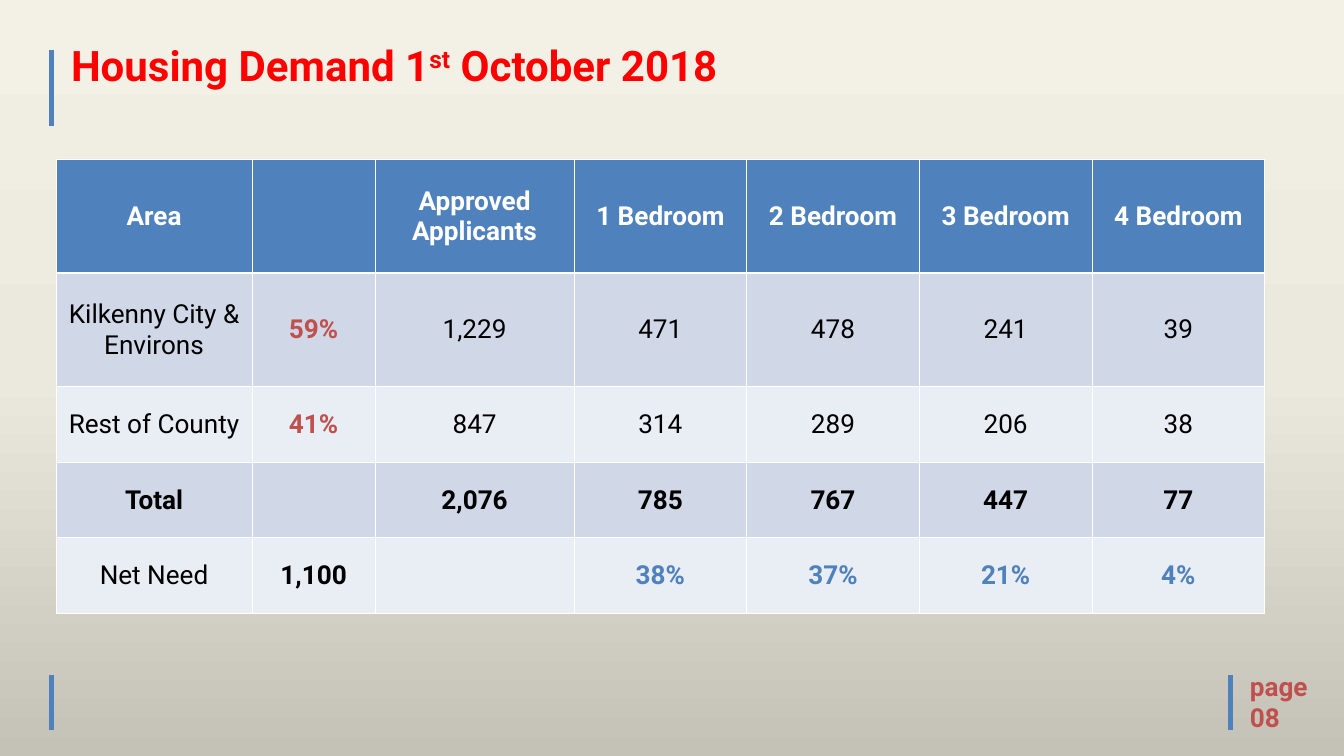
import copy

import pptx
import pptx.dml.color
import pptx.enum.shapes
import pptx.enum.text
import pptx.oxml
import pptx.oxml.ns
import pptx.util

Pt = pptx.util.Pt
RGBColor = pptx.dml.color.RGBColor

BLUE = RGBColor(0x4F, 0x81, 0xBD)
BRICK = RGBColor(0xC0, 0x50, 0x4D)
RED = RGBColor(0xFF, 0x00, 0x00)
BLACK = RGBColor(0x00, 0x00, 0x00)
WHITE = RGBColor(0xFF, 0xFF, 0xFF)
BAND_DARK = RGBColor(0xD0, 0xD8, 0xE8)
BAND_LIGHT = RGBColor(0xE9, 0xED, 0xF4)
BACKDROP = [
    (0, RGBColor(0xF3, 0xF1, 0xE5)),
    (0.5, RGBColor(0xEB, 0xE9, 0xDE)),
    (1, RGBColor(0xC4, 0xC2, 0xB7)),
]

COLUMN_WIDTHS = [210, 132, 213] + [185] * 4
ROW_HEIGHTS = [121.5] * 2 + [81] * 3
DEMAND = [
    ["Area", "", "Approved Applicants",
     "1 Bedroom", "2 Bedroom", "3 Bedroom", "4 Bedroom"],
    ["Kilkenny City & Environs", "59%", "1,229", "471", "478", "241", "39"],
    ["Rest of County", "41%", "847", "314", "289", "206", "38"],
    ["Total", "", "2,076", "785", "767", "447", "77"],
    ["Net Need", "1,100", "", "38%", "37%", "21%", "4%"],
]
HEADER, TOTAL, NET_NEED = 0, 3, 4


def demand_style(row, column):
    """Return the text colour and weight of a table cell."""
    if row == HEADER:
        return WHITE, True
    if row == TOTAL:
        return BLACK, True
    if row == NET_NEED:
        return (BLUE if column > 2 else BLACK), column > 0
    return (BRICK, True) if column == 1 else (BLACK, False)


class SlideBuilder:
    font = "Roboto"
    body_size = 28

    def __init__(self, slide):
        self.slide = slide

    def background(self, stops):
        fill = self.slide.background.fill
        fill.gradient()
        fill.gradient_angle = 270
        stop_list = self.slide.element.xpath(".//a:gsLst")[0]
        while len(stop_list) < len(stops):
            stop_list.append(copy.deepcopy(stop_list[-1]))
        for stop, (position, color) in zip(fill.gradient_stops, stops):
            stop.position = position
            stop.color.rgb = color

    def rule(self, x, top, bottom):
        line = self.slide.shapes.add_connector(
            pptx.enum.shapes.MSO_CONNECTOR.STRAIGHT,
            Pt(x), Pt(top), Pt(x), Pt(bottom))
        line.line.color.rgb = BLUE
        line.line.width = Pt(5)
        line.element.spPr.append(pptx.oxml.parse_xml(
            f"<a:effectLst {pptx.oxml.ns.nsdecls('a')}/>"))

    def add_span(self, para, text, color, size, bold=True):
        span = para.add_run()
        span.text = text
        span.font.name = self.font
        span.font.size = Pt(size)
        span.font.bold = bold
        span.font.color.rgb = color
        return span

    def text(self, left, top, width, height, lines, color, size, spacing=1.0):
        """Each line is a list of (text, superscript) pairs."""
        box = self.slide.shapes.add_textbox(
            Pt(left), Pt(top), Pt(width), Pt(height))
        frame = box.text_frame
        frame.word_wrap = True
        for index, line in enumerate(lines):
            para = frame.add_paragraph() if index else frame.paragraphs[0]
            para.line_spacing = spacing
            for words, superscript in line:
                span = self.add_span(para, words, color, size)
                if superscript:
                    span.font._element.set("baseline", "30000")

    def cell_borders(self, cell, top, bottom):
        properties = cell._tc.get_or_add_tcPr()
        for side, width in (("L", 1), ("R", 1), ("T", top), ("B", bottom)):
            properties.append(pptx.oxml.parse_xml(
                f"<a:ln{side} {pptx.oxml.ns.nsdecls('a')} w='{Pt(width)}'>"
                f"<a:solidFill><a:srgbClr val='{WHITE}'/></a:solidFill>"
                f"</a:ln{side}>"))

    def table(self, left, top, rows, widths, heights, style):
        table = self.slide.shapes.add_table(
            len(rows), len(widths), Pt(left), Pt(top),
            Pt(sum(widths)), Pt(sum(heights))).table
        for column, width in zip(table.columns, widths):
            column.width = Pt(width)
        for r, (values, height) in enumerate(zip(rows, heights)):
            table.rows[r].height = Pt(height)
            band = BLUE if r == 0 else BAND_DARK if r % 2 else BAND_LIGHT
            for c, value in enumerate(values):
                cell = table.cell(r, c)
                self.cell_borders(cell, 3 if r == 1 else 1, 3 if r == 0 else 1)
                cell.fill.solid()
                cell.fill.fore_color.rgb = band
                cell.vertical_anchor = pptx.enum.text.MSO_ANCHOR.MIDDLE
                cell.margin_left = cell.margin_right = cell.margin_top = Pt(0.75)
                cell.margin_bottom = Pt(0)
                if value:
                    para = cell.text_frame.paragraphs[0]
                    para.alignment = pptx.enum.text.PP_ALIGN.CENTER
                    color, bold = style(r, c)
                    self.add_span(para, value, color, self.body_size, bold)


def main():
    deck = pptx.Presentation()
    deck.slide_width, deck.slide_height = Pt(1440), Pt(810)
    page = SlideBuilder(deck.slides.add_slide(deck.slide_layouts[6]))

    # Background and accent rules
    page.background(BACKDROP)
    page.rule(55.4, 54, 135)
    for x in (55.4, 1318.3):
        page.rule(x, 723.5, 782)

    # Title
    page.text(69, 44.6, 771, 105,
              [[("Housing Demand 1", False), ("st", True),
                (" October 2018", False)]], RED, 45, 0.9)

    # Page number
    page.text(1332, 714.5, 137, 75,
              [[("page", False)], [("08", False)]], BRICK, page.body_size)

    # Demand table
    page.table(60, 171, DEMAND, COLUMN_WIDTHS, ROW_HEIGHTS, demand_style)

    deck.save("out.pptx")


if __name__ == "__main__":
    main()
